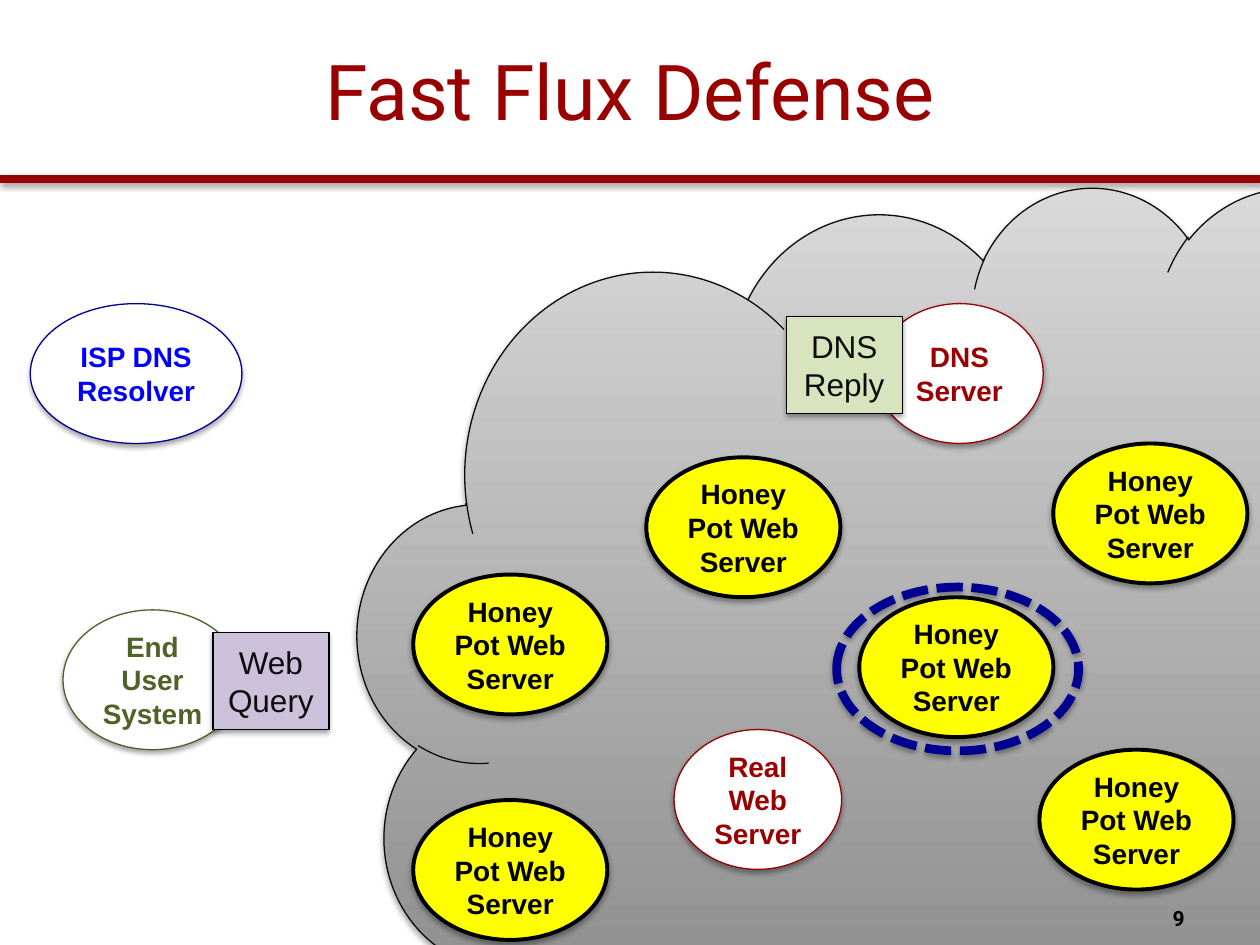
from lxml import etree
from pptx import Presentation
from pptx.dml.color import RGBColor
from pptx.enum.dml import MSO_LINE
from pptx.enum.shapes import MSO_CONNECTOR, MSO_SHAPE
from pptx.enum.text import MSO_ANCHOR, PP_ALIGN
from pptx.oxml.ns import qn
from pptx.util import Inches, Pt

ELLIPSE = MSO_SHAPE.OVAL
BOX = MSO_SHAPE.FLOWCHART_PROCESS
CLOUD = MSO_SHAPE.CLOUD_CALLOUT
STRAIGHT = MSO_CONNECTOR.STRAIGHT
DASH = MSO_LINE.SQUARE_DOT
MIDDLE = MSO_ANCHOR.MIDDLE
CENTER, RIGHT = PP_ALIGN.CENTER, PP_ALIGN.RIGHT

COLORS = {
    "red": "990000", "dark_red": "960000", "navy": "000090", "blue": "0000FF",
    "olive": "4F6228", "green": "D7E4BD", "purple": "CCC1DA",
    "yellow": "FFFF00", "white": "FFFFFF", "black": "000000", "ink": "0D0D0D",
    "cloud_dark": "808080", "cloud_light": "D9D9D9",
}

NODE_H = 1.11
HONEY_POTS = [(5.13, 3.63), (8.25, 5.95), (8.36, 3.52),
              (6.82, 4.74), (3.28, 4.56), (3.28, 6.35)]


def rgb(name):
    return RGBColor.from_string(COLORS[name])


def add_shadow(sp, opacity=35, distance=1.8):
    """Soft shadow straight below; call after fill and line are set."""
    effects = etree.SubElement(sp._element.spPr, qn("a:effectLst"))
    shadow = etree.SubElement(
        effects, qn("a:outerShdw"), blurRad=str(Pt(3.1)),
        dist=str(Pt(distance)), dir="5400000", rotWithShape="0")
    color = etree.SubElement(shadow, qn("a:srgbClr"), val=COLORS["black"])
    etree.SubElement(color, qn("a:alpha"), val=str(opacity * 1000))


def set_text(tf, text, size, color, font="Arial", bold=False, align=CENTER):
    tf.text = text
    tf.word_wrap = True
    tf.vertical_anchor = MIDDLE
    p = tf.paragraphs[0]
    p.alignment = align
    r = p.runs[0]
    r.font.name, r.font.size, r.font.bold = font, Pt(size), bold
    r.font.color.rgb = rgb(color)


def add_shape(s, kind, at, line, width=0.75, fill=None):
    sp = s.shapes.add_shape(kind, *map(Inches, at))
    if fill:
        sp.fill.solid()
        sp.fill.fore_color.rgb = rgb(fill)
    else:
        sp.fill.background()
    sp.line.color.rgb = rgb(line)
    sp.line.width = Pt(width)
    add_shadow(sp)
    return sp


def add_node(s, text, x, y, w, line, color, fill="white", width=0.75):
    sp = add_shape(s, ELLIPSE, (x, y, w, NODE_H), line, width, fill)
    set_text(sp.text_frame, text, 16, color, bold=True)


def add_message(s, text, x, y, fill):
    sp = add_shape(s, BOX, (x, y, 0.92, 0.77), "black", fill=fill)
    set_text(sp.text_frame, text, 18, "ink")


def add_header(s):
    title = s.shapes.title
    title.left, title.top, title.width, title.height = map(
        Inches, (0.5, 0.09, 9, 1.25))
    set_text(title.text_frame, "Fast Flux Defense", 44, "red", "Roboto")
    rule = s.shapes.add_connector(
        STRAIGHT, 0, Inches(1.42), Inches(10), Inches(1.42))
    rule.line.color.rgb = rgb("red")
    rule.line.width = Pt(5)
    add_shadow(rule, 38, 1.6)


def add_cloud(s):
    sp = add_shape(s, CLOUD, (2.84, 1.47, 9.55, 7.57), "ink")
    sp.adjustments[0], sp.adjustments[1] = 1.87, 1.47
    sp.fill.gradient()
    sp.fill.gradient_angle = 90
    for stop, name in zip(sp.fill.gradient_stops, ("cloud_dark", "cloud_light")):
        stop.color.rgb = rgb(name)


def add_page_number(s, number):
    box = s.shapes.add_textbox(*map(Inches, (7.17, 7.15, 2.33, 0.27)))
    set_text(box.text_frame, number, 12, "black", "Roboto", True, RIGHT)


def main():
    prs = Presentation()
    prs.slide_width, prs.slide_height = Inches(10), Inches(7.5)
    s = prs.slides.add_slide(prs.slide_layouts[5])

    # Header and background
    add_header(s)
    add_cloud(s)
    add_page_number(s, "9")

    # Hosts and servers
    add_node(s, "End User System", 0.5, 4.84, 1.42, "olive", "olive")
    add_node(s, "ISP DNS Resolver", 0.24, 2.41, 1.68, "navy", "blue")
    add_node(s, "DNS Server", 6.95, 2.41, 1.33, "dark_red", "red")
    add_node(s, "Real Web Server", 5.35, 5.79, 1.33, "dark_red", "red")
    add_message(s, "DNS Reply", 6.24, 2.51, "green")

    # Honey pots, one of them ringed
    for x, y in HONEY_POTS:
        add_node(s, "Honey Pot Web Server", x, y, 1.54,
                 "black", "black", "yellow", 2.25)
    ring = add_shape(s, ELLIPSE, (6.64, 4.66, 1.92, 1.3), "navy", 5)
    ring.line.dash_style = DASH

    add_message(s, "Web Query", 1.69, 5.02, "purple")
    prs.save("out.pptx")


if __name__ == "__main__":
    main()
